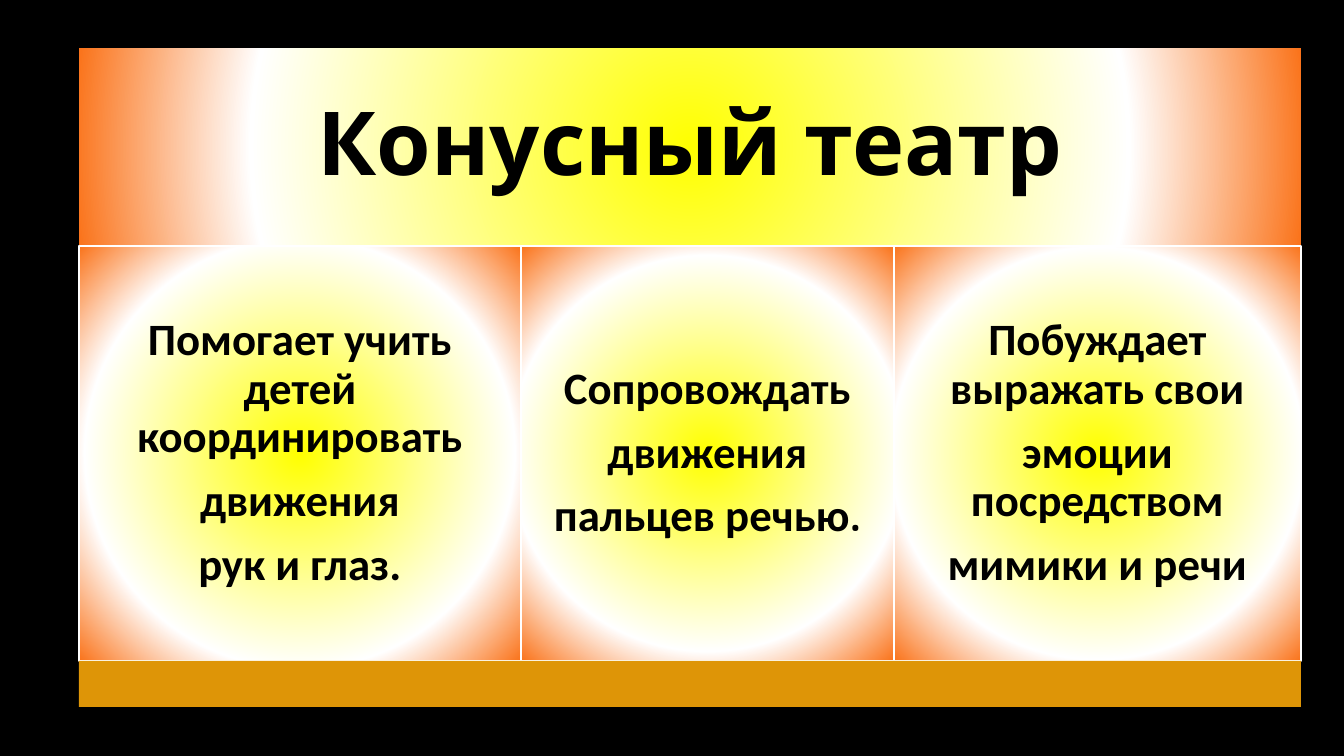
import dataclasses

import lxml.etree
import pptx
import pptx.dml.color
import pptx.enum.shapes
import pptx.enum.text
import pptx.oxml.ns
import pptx.shapes.autoshape
import pptx.slide
import pptx.util

RGBColor = pptx.dml.color.RGBColor
BLACK = RGBColor(0x00, 0x00, 0x00)
WHITE = RGBColor(0xFF, 0xFF, 0xFF)
YELLOW = RGBColor(0xFF, 0xFF, 0x00)
ORANGE = RGBColor(0xFA, 0x73, 0x1A)
AMBER = RGBColor(0xDE, 0x95, 0x07)

GLOW = ((0, YELLOW), (71, WHITE), (100, ORANGE))
LEFT, TOP, WIDTH = 79, 48, 1222
HEAD, BODY, FOOT = 198, 415, 46


@dataclasses.dataclass
class Card:
    width: int
    lines: list[str]
    tail: str = ""


CARDS = [
    Card(442, ["Помогает учить детей координировать", "движения", "рук и глаз."]),
    Card(373, ["Сопровождать", "движения", "пальцев речью"], "."),
    Card(407, ["Побуждает выражать свои", "эмоции посредством", "мимики и речи"]),
]


def px(count: int) -> pptx.util.Emu:
    return pptx.util.Emu(round(count * 914400 / 100.8))


def glow(shape: pptx.shapes.autoshape.Shape) -> None:
    """Fill the shape with a round gradient from its centre."""
    qn = pptx.oxml.ns.qn
    add = lxml.etree.SubElement
    shape.fill.gradient()
    grad = shape.element.spPr.find(qn("a:gradFill"))
    for child in list(grad):
        grad.remove(child)
    stops = add(grad, qn("a:gsLst"))
    for place, color in GLOW:
        stop = add(stops, qn("a:gs"), pos=str(place * 1000))
        add(stop, qn("a:srgbClr"), val=str(color))
    way = add(grad, qn("a:path"), path="circle")
    add(way, qn("a:fillToRect"), l="50000", t="50000", r="50000", b="50000")


def write(shape: pptx.shapes.autoshape.Shape, lines: list[str], *, font: str,
          size: int, inset: int, after: int = 0, tail: str = "") -> None:
    """Set centred bold text; tail ends the last line in Quicksand."""
    frame = shape.text_frame
    frame.word_wrap = True
    frame.auto_size = pptx.enum.text.MSO_AUTO_SIZE.NONE
    frame.vertical_anchor = pptx.enum.text.MSO_ANCHOR.MIDDLE
    frame.margin_left = frame.margin_right = px(inset)
    frame.margin_top = frame.margin_bottom = px(inset)
    frame.text = "\n".join(lines)
    if tail:
        frame.paragraphs[-1].add_run().text = tail
    for para in frame.paragraphs:
        para.alignment = pptx.enum.text.PP_ALIGN.CENTER
        para.line_spacing = 0.9
        para.space_after = pptx.util.Pt(after)
        for run in para.runs:
            run.font.name = font
            run.font.size = pptx.util.Pt(size)
            run.font.bold = True
            run.font.color.rgb = BLACK
    if tail:
        frame.paragraphs[-1].runs[-1].font.name = "Quicksand"


def block(slide: pptx.slide.Slide, left: int, top: int, width: int,
          height: int) -> pptx.shapes.autoshape.Shape:
    shape = slide.shapes.add_shape(
        pptx.enum.shapes.MSO_SHAPE.RECTANGLE,
        px(left), px(top), px(width), px(height))
    shape.shadow.inherit = False
    return shape


def main() -> None:
    deck = pptx.Presentation()
    deck.slide_width, deck.slide_height = px(1344), px(756)
    slide = deck.slides.add_slide(deck.slide_layouts[5])
    slide.background.fill.solid()
    slide.background.fill.fore_color.rgb = BLACK

    title = slide.shapes.title
    title.left, title.top = px(LEFT), px(TOP)
    title.width, title.height = px(WIDTH), px(HEAD)
    glow(title)
    write(title, ["Конусный театр"], font="Karla", size=63, inset=26)

    left = LEFT
    for card in CARDS:
        shape = block(slide, left, TOP + HEAD, card.width, BODY)
        glow(shape)
        shape.line.color.rgb = WHITE
        shape.line.width = pptx.util.Pt(1.5)
        write(shape, card.lines, font="Calibri", size=32, inset=13,
              after=11, tail=card.tail)
        left += card.width

    foot = block(slide, LEFT, TOP + HEAD + BODY, WIDTH, FOOT)
    foot.fill.solid()
    foot.fill.fore_color.rgb = AMBER
    foot.line.fill.background()

    deck.save("out.pptx")


if __name__ == "__main__":
    main()
